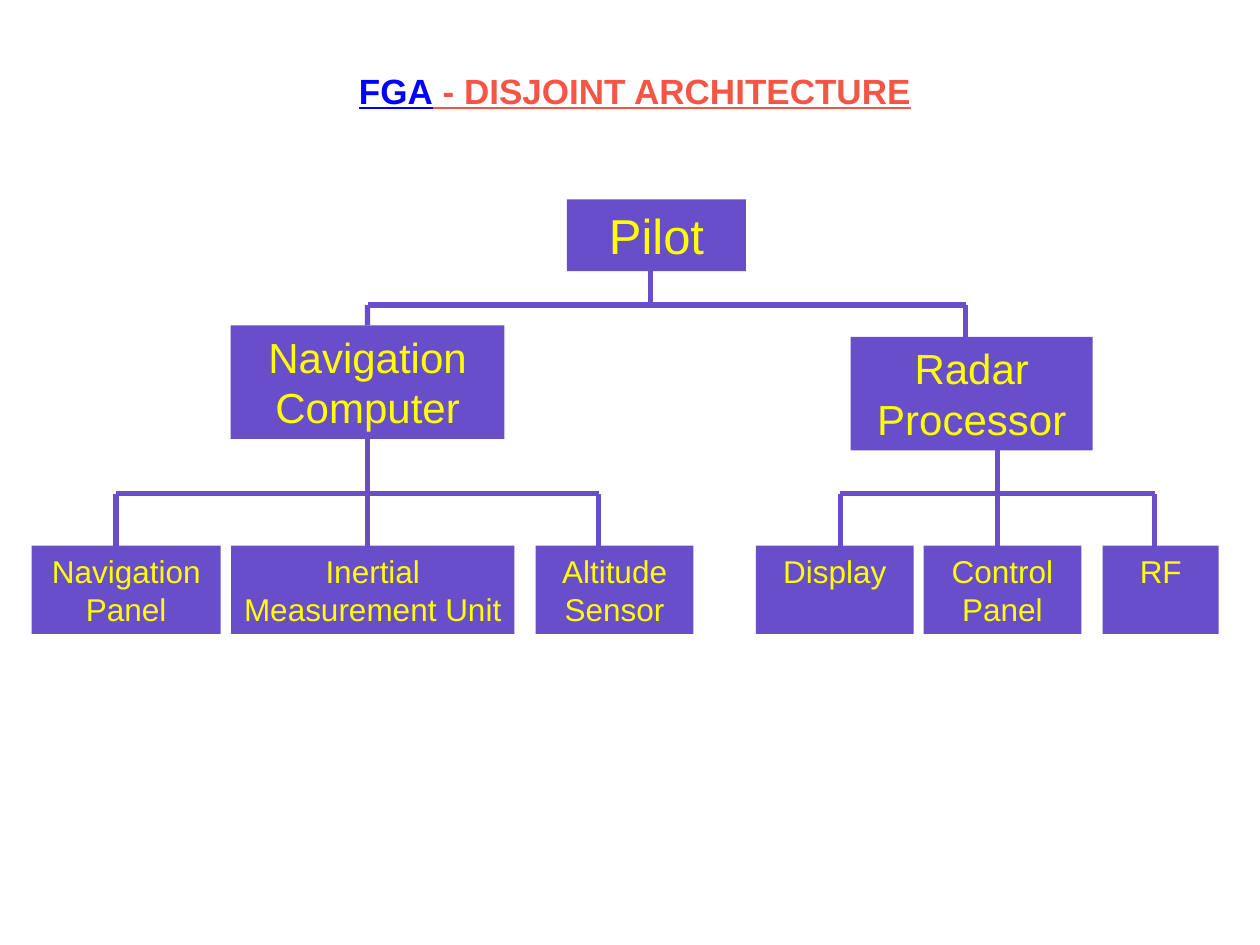
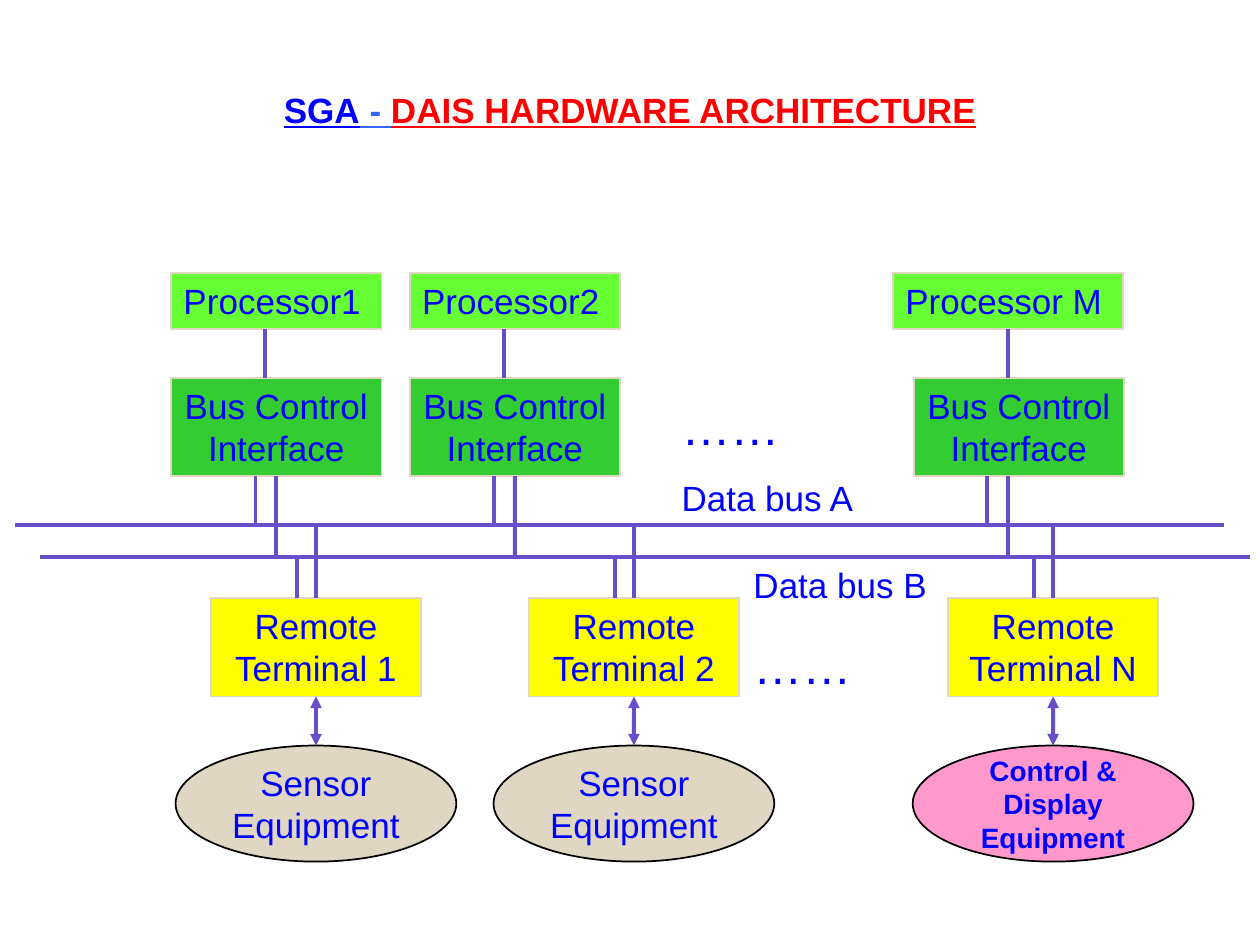
from lxml import etree
from pptx import Presentation
from pptx.dml.color import RGBColor
from pptx.enum.shapes import MSO_CONNECTOR, MSO_SHAPE
from pptx.enum.text import MSO_ANCHOR, MSO_AUTO_SIZE, PP_ALIGN
from pptx.oxml.ns import qn
from pptx.util import Cm, Pt

STRAIGHT = MSO_CONNECTOR.STRAIGHT
RECTANGLE, OVAL = MSO_SHAPE.RECTANGLE, MSO_SHAPE.OVAL
TOP, MIDDLE = MSO_ANCHOR.TOP, MSO_ANCHOR.MIDDLE
LEFT, CENTER = PP_ALIGN.LEFT, PP_ALIGN.CENTER
FIXED = MSO_AUTO_SIZE.NONE
TOP_SIDE, BOTTOM_SIDE = 0, 2

FONT = "Arial"
PURPLE = RGBColor(0x68, 0x4E, 0xC8)
YELLOW = RGBColor(0xFF, 0xFF, 0x00)
BLUE = RGBColor(0x00, 0x00, 0xFF)
SKY = RGBColor(0x33, 0x66, 0xFF)
CORAL = RGBColor(0xF4, 0x55, 0x44)
RED = RGBColor(0xFF, 0x00, 0x00)
LIME = RGBColor(0x66, 0xFF, 0x33)
GREEN = RGBColor(0x33, 0xCC, 0x33)
SAND = RGBColor(0xDF, 0xD6, 0xC3)
PINK = RGBColor(0xFF, 0x99, 0xCC)
BLACK = RGBColor(0x00, 0x00, 0x00)

TREE_LINE, BUS_LINE = 3, 2.25
BUS_A, BUS_B = 10.59, 11.23


def add_run(paragraph, text, size, color, bold=False, underline=False):
    run = paragraph.add_run()
    run.text = text
    font = run.font
    font.name, font.size, font.bold, font.underline = FONT, Pt(size), bold, underline
    font.color.rgb = color


def set_frame(frame, anchor=TOP):
    frame.word_wrap = True
    frame.auto_size = FIXED
    frame.vertical_anchor = anchor


def add_title(slide, left, top, width, parts):
    title = slide.shapes.title
    title.left, title.top, title.width, title.height = Cm(left), Cm(top), Cm(width), Cm(1.1)
    set_frame(title.text_frame)
    paragraph = title.text_frame.paragraphs[0]
    paragraph.alignment = CENTER
    for text, color in parts:
        add_run(paragraph, text, 20, color, bold=True, underline=True)


def add_block(slide, left, top, width, height, label, size, fill, color,
              outline=None, align=CENTER, outline_shape=RECTANGLE, bold=False):
    block = slide.shapes.add_shape(outline_shape, Cm(left), Cm(top), Cm(width), Cm(height))
    block.shadow.inherit = False
    block.fill.solid()
    block.fill.fore_color.rgb = fill
    if outline is None:
        block.line.fill.background()
    else:
        block.line.color.rgb = outline
        block.line.width = Pt(1)
    frame = block.text_frame
    set_frame(frame, MIDDLE if outline_shape == OVAL else TOP)
    if outline_shape == OVAL:
        frame.margin_left = frame.margin_right = frame.margin_top = frame.margin_bottom = 0
    frame.paragraphs[0].alignment = align
    add_run(frame.paragraphs[0], label, size, color, bold)
    return block


def is_middle(block, x):
    return abs(block.left + block.width / 2 - Cm(x)) < Cm(0.02)


def add_wire(slide, start, end, weight, source=None, target=None,
             source_side=BOTTOM_SIDE, arrows=False):
    wire = slide.shapes.add_connector(STRAIGHT, *(Cm(v) for v in (*start, *end)))
    wire.line.color.rgb = PURPLE
    wire.line.width = Pt(weight)
    if arrows:
        for tag in ("a:headEnd", "a:tailEnd"):
            etree.SubElement(wire.line._get_or_add_ln(), qn(tag), type="triangle")
    etree.SubElement(wire._element.spPr, qn("a:effectLst"))
    if source is not None and is_middle(source, start[0]):
        wire.begin_connect(source, source_side)
    if target is not None and is_middle(target, end[0]):
        wire.end_connect(target, TOP_SIDE)


def add_branch(slide, parent, stem_x, bar_y, drops):
    bottom = (parent.top + parent.height) / Cm(1)
    add_wire(slide, (stem_x, bottom), (stem_x, bar_y), TREE_LINE, source=parent)
    add_wire(slide, (drops[0][0], bar_y), (drops[-1][0], bar_y), TREE_LINE)
    for x, child in drops:
        add_wire(slide, (x, bar_y), (x, child.top / Cm(1)), TREE_LINE, target=child)


def add_subsystem(slide, left, top, computer, stem, components):
    label, offset, width = computer
    head = add_block(slide, left + offset, top, width, 2.29, label, 24, PURPLE, YELLOW)
    drops = []
    for label, offset, width, drop in components:
        unit = add_block(slide, left + offset, 11, width, 1.78, label, 18, PURPLE, YELLOW)
        drops.append((left + drop, unit))
    add_branch(slide, head, left + stem, 9.95, drops)
    return head


def add_disjoint_slide(prs):
    slide = prs.slides.add_slide(prs.slide_layouts[5])
    add_title(slide, 5.5, 1.27, 14.6, [("FGA", BLUE), (" - DISJOINT ARCHITECTURE", CORAL)])
    pilot = add_block(slide, 11.43, 4.02, 3.61, 1.45, "Pilot", 28, PURPLE, YELLOW)
    navigation = add_subsystem(
        slide, 0.64, 6.56, ("Navigation Computer", 4.01, 5.52), 6.77,
        [("Navigation Panel", 0, 3.81, 1.7),
         ("Inertial Measurement Unit", 4.02, 5.71, 6.77),
         ("Altitude Sensor", 10.16, 3.18, 11.43)])
    radar = add_subsystem(
        slide, 15.24, 6.79, ("Radar Processor", 1.91, 4.88), 4.87,
        [("Display", 0, 3.18, 1.7),
         ("Control Panel", 3.38, 3.18, 4.87),
         ("RF", 6.99, 2.34, 8.04)])
    add_branch(slide, pilot, 13.12, 6.15, [(7.41, navigation), (19.47, radar)])


def add_processor(slide, left, name, processor_left, processor_width, drop_b):
    processor = add_block(slide, processor_left, 5.51, processor_width, 1.13, name, 20,
                          LIME, BLUE, SAND, LEFT)
    interface = add_block(slide, left, 7.62, 4.24, 1.98, "Bus Control Interface", 20,
                          GREEN, BLUE, SAND)
    link = left + 1.9
    add_wire(slide, (link, 6.64), (link, 7.62), BUS_LINE, processor, interface)
    for x, bus in ((left + drop_b - 0.42, BUS_A), (left + drop_b, BUS_B)):
        add_wire(slide, (x, 9.6), (x, bus), BUS_LINE, interface)


def add_terminal(slide, center, name, equipment, size, fill, bold):
    terminal = add_block(slide, center - 2.12, 12.06, 4.24, 1.98, name, 20,
                         YELLOW, BLUE, SAND)
    device = add_block(slide, center - 2.83, 15.03, 5.66, 2.34, equipment, size,
                       fill, BLUE, BLACK, outline_shape=OVAL, bold=bold)
    add_wire(slide, (center, 14.04), (center, 15.03), BUS_LINE, terminal, device, arrows=True)
    for x, bus in ((center - 0.38, BUS_B), (center, BUS_A)):
        add_wire(slide, (x, 12.06), (x, bus), BUS_LINE, terminal, source_side=TOP_SIDE)


def add_bus_note(slide, left, top, width, height, lines):
    frame = slide.shapes.add_textbox(Cm(left), Cm(top), Cm(width), Cm(height)).text_frame
    set_frame(frame)
    for index, (text, size) in enumerate(lines):
        paragraph = frame.add_paragraph() if index else frame.paragraphs[0]
        if index:
            paragraph.space_before = Pt(round(size * 0.6))
        add_run(paragraph, text, size, BLUE)


def add_dais_slide(prs):
    slide = prs.slides.add_slide(prs.slide_layouts[5])
    add_title(slide, 4.45, 1.65, 16.5,
              [("SGA", BLUE), (" - ", SKY), ("DAIS HARDWARE ARCHITECTURE", RED)])
    for left, bus in ((0.3, BUS_A), (0.81, BUS_B)):
        add_wire(slide, (left, bus), (left + 24.38, bus), BUS_LINE)
    for left, name, processor_left, processor_width, drop_b in (
            (3.45, "Processor1", 3.45, 4.24, 2.12),
            (8.26, "Processor2", 8.26, 4.24, 2.12),
            (18.42, "Processor M", 18, 4.64, 1.9)):
        add_processor(slide, left, name, processor_left, processor_width, drop_b)
    for center, name, equipment, size, fill, bold in (
            (6.37, "Remote Terminal 1", "Sensor Equipment", 20, SAND, False),
            (12.78, "Remote Terminal 2", "Sensor Equipment", 20, SAND, False),
            (21.23, "Remote Terminal N", "Control & Display Equipment", 16, PINK, True)):
        add_terminal(slide, center, name, equipment, size, fill, bold)
    dots = ("……", 28)
    add_bus_note(slide, 13.49, 7.87, 5.61, 2.72, [dots, ("Data bus A", 20)])
    add_bus_note(slide, 14.94, 11.23, 4.24, 2.9, [("Data bus B", 20), dots])


def main():
    prs = Presentation()
    prs.slide_width, prs.slide_height = Cm(25.4), Cm(19.05)
    add_disjoint_slide(prs)
    add_dais_slide(prs)
    prs.save("out.pptx")


if __name__ == "__main__":
    main()
